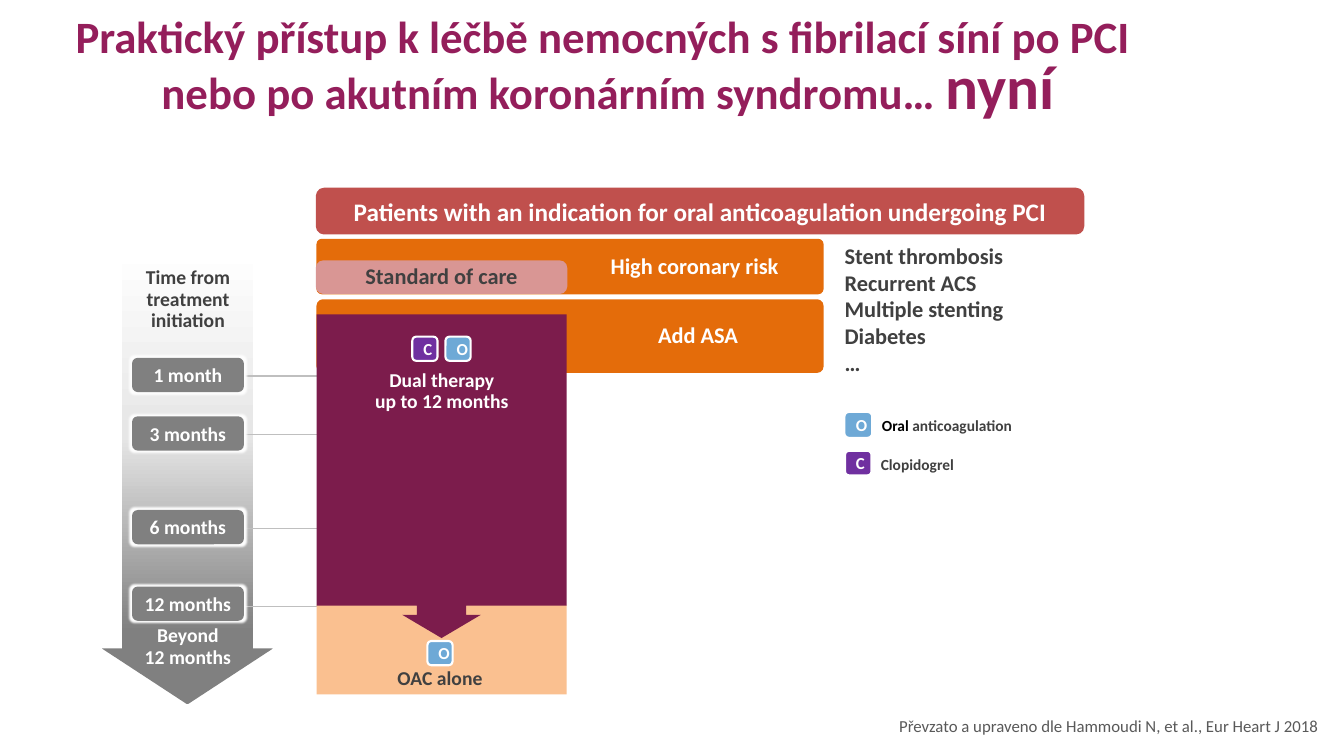
import copy
import pptx
import pptx.util
import pptx.dml.color
import pptx.enum.shapes
import pptx.enum.text
import pptx.oxml
import pptx.oxml.ns

Pt = pptx.util.Pt
RGBColor = pptx.dml.color.RGBColor
SHAPE = pptx.enum.shapes.MSO_SHAPE
ALIGN = pptx.enum.text.PP_ALIGN
ANCHOR = pptx.enum.text.MSO_ANCHOR
qn = pptx.oxml.ns.qn

WHITE = RGBColor(0xFF, 0xFF, 0xFF)
BLACK = RGBColor(0, 0, 0)
DARK = RGBColor(0x40, 0x40, 0x40)
SOURCE_GRAY = RGBColor(0x59, 0x59, 0x59)
GRAY = RGBColor(0x80, 0x80, 0x80)
RULE_GRAY = RGBColor(0xBF, 0xBF, 0xBF)
PALE_GRAY = RGBColor(0xE6, 0xE6, 0xE6)
TITLE_PLUM = RGBColor(0x94, 0x1E, 0x5B)
PLUM = RGBColor(0x7C, 0x1C, 0x4C)
ORANGE = RGBColor(0xE4, 0x6C, 0x0A)
PEACH = RGBColor(0xFA, 0xC0, 0x90)
RED = RGBColor(0xC0, 0x50, 0x4D)
PINK = RGBColor(0xD9, 0x96, 0x94)
BLUE = RGBColor(0x6E, 0xA9, 0xD6)
PURPLE = RGBColor(0x70, 0x30, 0xA0)

TITLE = [
    ("Praktický přístup k léčbě nemocných s fibrilací síní po PCI \n"
     "nebo po akutním koronárním syndromu… ", 32, TITLE_PLUM),
    ("nyní", 44, TITLE_PLUM),
]
SOURCE = "Převzato a upraveno dle Hammoudi N, et al., Eur Heart J 2018"
RISKS = ["Stent thrombosis", "Recurrent ACS", "Multiple stenting", "Diabetes", "…"]
RISK_BARS = [
    ("Add ASA", 213.8, 52.6, 0.087, 59.8),
    ("High coronary risk", 170.6, 39.6, 0.095, 31),
]
MONTHS = [
    ("1 month", 255.6, 268.6, 265),
    ("3 months", 297.4, 310.3, 265),
    ("6 months", 364.3, 377.3, 265),
    ("12 months", 419, 433.4, 232.6),
]
BADGES = [
    ("C", PURPLE, 294.5, 240.5, 18, 17.3, 1.5),
    ("O", BLUE, 318.2, 240.5, 18, 17.3, 1.5),
    ("O", BLUE, 305.3, 457.9, 18, 17.3, 1.5),
    ("O", BLUE, 603.4, 294.5, 19.4, 18, 1),
    ("C", PURPLE, 603.4, 321.8, 19.4, 18, 2),
]
LABELS = [
    ([("Time from\ntreatment\ninitiation", 14, DARK)], (84.3, 187.5, 100, 53.3), ALIGN.CENTER),
    ([("Beyond\n12 months", 14, WHITE)], (84.3, 446.4, 100, 31.7), ALIGN.CENTER),
    ([("Dual therapy\nup to 12 months", 14, WHITE)], (255.6, 259.9, 120, 40.3), ALIGN.CENTER),
    ([("OAC alone", 14, DARK)], (264.3, 472.6, 100, 25.2), ALIGN.CENTER),
    ([("Oral ", 11, BLACK), ("anticoagulation", 11, DARK)], (622.8, 295.2, 108.7, 19.4), ALIGN.LEFT),
    ([("Clopidogrel", 11, DARK)], (622.1, 322.6, 67, 19.4), ALIGN.LEFT),
]
COLUMN_LEFT, COLUMN_WIDTH = 226.1, 178.6
PILL_LEFT, PILL_WIDTH, PILL_HEIGHT = 94.3, 79.9, 24.5

presentation = pptx.Presentation()
presentation.slide_width, presentation.slide_height = Pt(960), Pt(540)
slide = presentation.slides.add_slide(presentation.slide_layouts[5])


def write(shape, paragraphs, align=ALIGN.CENTER, spacing=1, bold=True,
          anchor=ANCHOR.MIDDLE, wrap=True):
    frame = shape.text_frame
    frame.word_wrap = wrap
    frame.vertical_anchor = anchor
    for index, runs in enumerate(paragraphs):
        paragraph = frame.paragraphs[0] if index == 0 else frame.add_paragraph()
        paragraph.alignment = align
        paragraph.line_spacing = spacing
        for text, size, color in runs:
            for line_index, line in enumerate(text.split("\n")):
                if line_index:
                    paragraph.add_line_break()
                run = paragraph.add_run()
                run.text = line
                run.font.name = "Calibri"
                run.font.size = Pt(size)
                run.font.bold = bold
                run.font.color.rgb = color


def paint(shape, fill, line=None, width=1):
    shape.shadow.inherit = False
    shape.fill.solid()
    shape.fill.fore_color.rgb = fill
    if line is None:
        shape.line.fill.background()
    else:
        shape.line.color.rgb = line
        shape.line.width = Pt(width)


def add_block(kind, box, fill, line=None, width=1, corner=None):
    shape = slide.shapes.add_shape(kind, *map(Pt, box))
    paint(shape, fill, line, width)
    if corner is not None:
        shape.adjustments[0] = corner
    return shape


def add_glow(shape):
    effects = shape._element.spPr.find(qn("a:effectLst"))
    effects.append(pptx.oxml.parse_xml(
        '<a:glow xmlns:a="http://schemas.openxmlformats.org/drawingml/2006/main" rad="38100">'
        '<a:srgbClr val="FFFFFF"/></a:glow>'))


def add_time_arrow():
    arrow = add_block(SHAPE.DOWN_ARROW, (72.7, 177.8, 122.4, 325.4), GRAY)
    arrow.adjustments[0], arrow.adjustments[1] = 0.763, 0.327
    arrow.fill.gradient()
    arrow.fill.gradient_angle = 90
    stops = arrow._element.spPr.find(qn("a:gradFill")).find(qn("a:gsLst"))
    stops.append(copy.deepcopy(stops[0]))
    shades = [(0.16, GRAY), (0.59, PALE_GRAY), (1, WHITE)]
    for stop, (position, color) in zip(arrow.fill.gradient_stops, shades):
        stop.position = position
        stop.color.rgb = color


def add_rule(left, right, top):
    rule = slide.shapes.add_connector(
        pptx.enum.shapes.MSO_CONNECTOR.STRAIGHT, Pt(left), Pt(top), Pt(right), Pt(top))
    rule.line.color.rgb = RULE_GRAY
    rule.line.width = Pt(1)
    rule._element.spPr.append(pptx.oxml.parse_xml(
        '<a:effectLst xmlns:a="http://schemas.openxmlformats.org/drawingml/2006/main"/>'))


def add_therapy_arrow():
    left, right = COLUMN_LEFT, COLUMN_LEFT + COLUMN_WIDTH
    center = (left + right) / 2
    top, base, shoulder, tip = 224.6, 432.7, 439.2, 455.8
    stem, head = 17.6, 28.1
    points = [(right, top), (right, base), (center + stem, base), (center + stem, shoulder),
              (center + head, shoulder), (center, tip), (center - head, shoulder),
              (center - stem, shoulder), (center - stem, base), (left, base)]
    builder = slide.shapes.build_freeform(Pt(left), Pt(top))
    builder.add_line_segments([(Pt(x), Pt(y)) for x, y in points], close=True)
    paint(builder.convert_to_shape(), PLUM)


def add_text(box, paragraphs, **options):
    write(slide.shapes.add_textbox(*map(Pt, box)), paragraphs, **options)


title = slide.shapes.title
title.left, title.top, title.width, title.height = map(Pt, (18.7, 20.9, 831.6, 59))
write(title, [TITLE], spacing=0.8)

for text, top, height, corner, inset in RISK_BARS:
    bar = add_block(SHAPE.ROUNDED_RECTANGLE, (COLUMN_LEFT, top, 362.2, height), ORANGE, corner=corner)
    bar.text_frame.margin_right = Pt(inset)
    write(bar, [[(text, 16, WHITE)]], ALIGN.RIGHT, 0.95)

add_time_arrow()
for text, top, rule_top, rule_right in MONTHS:
    add_rule(137.5, rule_right, rule_top)
    pill = add_block(SHAPE.ROUNDED_RECTANGLE, (PILL_LEFT, top, PILL_WIDTH, PILL_HEIGHT), GRAY)
    add_glow(pill)
    write(pill, [[(text, 14, WHITE)]], wrap=False)

header = add_block(SHAPE.ROUNDED_RECTANGLE, (COLUMN_LEFT, 134.6, 547.9, 32.4), RED, RED)
write(header, [[("Patients with an indication for oral anticoagulation undergoing PCI", 18, WHITE)]])
standard = add_block(SHAPE.ROUNDED_RECTANGLE, (COLUMN_LEFT, 186.5, COLUMN_WIDTH, 23),
                     PINK, PINK, corner=0.213)
write(standard, [[("Standard of care", 16, DARK)]], spacing=0.95)
add_block(SHAPE.RECTANGLE, (COLUMN_LEFT, 432, COLUMN_WIDTH, 64.1), PEACH)
add_therapy_arrow()

for letter, fill, left, top, width, height, border in BADGES:
    badge = add_block(SHAPE.ROUNDED_RECTANGLE, (left, top, width, height), fill, WHITE, border)
    write(badge, [[(letter, 12, WHITE)]])

for runs, box, align in LABELS:
    add_text(box, [runs], align=align, spacing=0.9, wrap=False)
add_text((596.2, 169.2, 129.6, 104.4), [[(risk, 16, DARK)] for risk in RISKS],
         align=ALIGN.LEFT, anchor=ANCHOR.TOP, wrap=False)
add_text((10.1, 492.5, 938.9, 52.6), [[(SOURCE, 12, SOURCE_GRAY)]],
         align=ALIGN.RIGHT, bold=False)

presentation.save("out.pptx")
